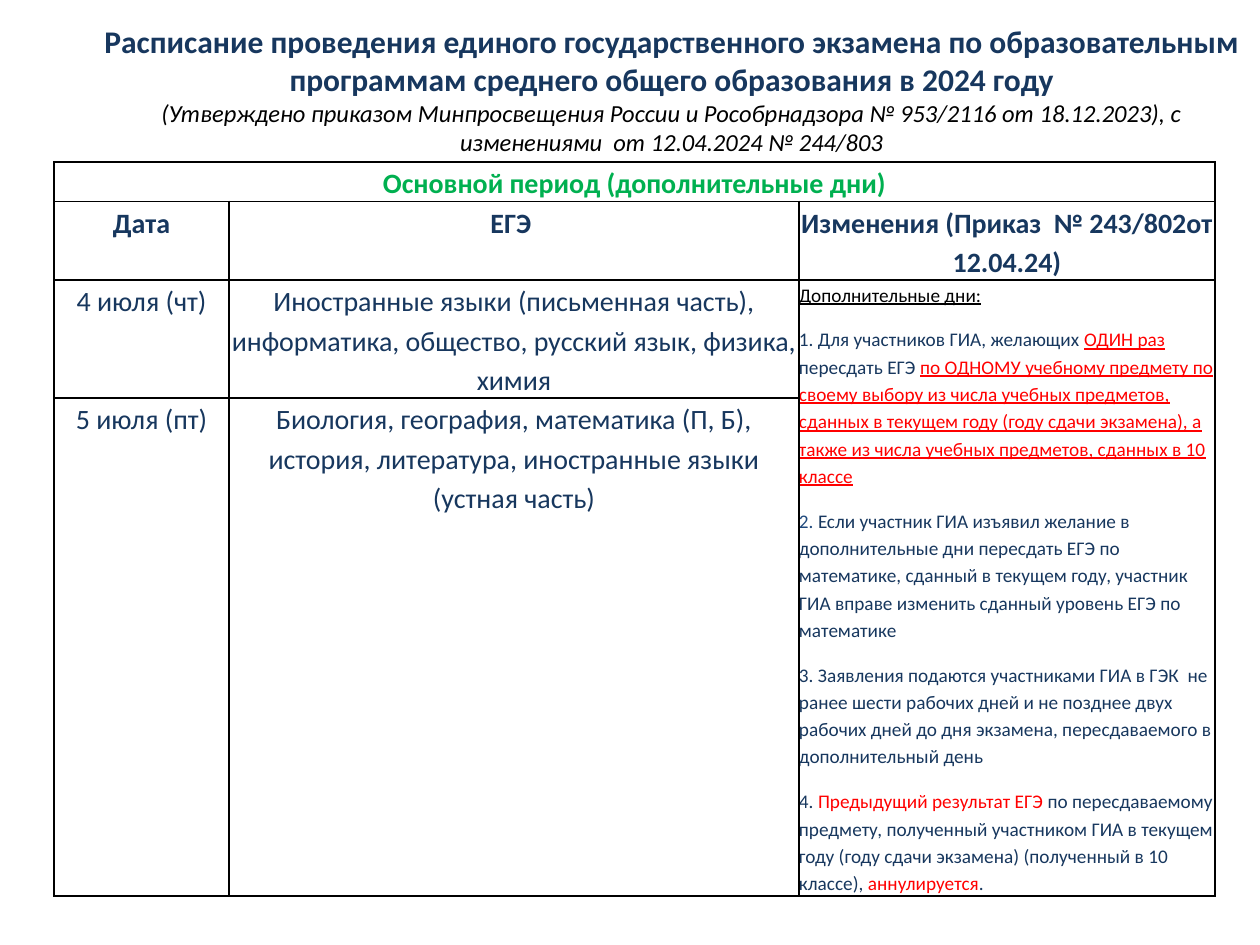
from lxml.etree import SubElement
from pptx import Presentation
from pptx.dml.color import RGBColor
from pptx.enum.text import MSO_ANCHOR, PP_ALIGN
from pptx.oxml.ns import qn
from pptx.util import Emu, Pt

PX = 914400 // 126
FONT = "Calibri"
COLORS = {"navy": "17375E", "green": "00B050", "red": "FF0000", "blue": "1F497D", "black": "000000"}

TITLE_BOX = (84, 16, 1176, 217)
TITLE = "Расписание проведения единого государственного экзамена по образовательным программам среднего общего образования в 2024 году"
APPROVAL = "(Утверждено приказом Минпросвещения России и Рособрнадзора № 953/2116 от 18.12.2023), с изменениями  от 12.04.2024 № 244/803"

TABLE_ORIGIN = (54, 162)
COLUMN_WIDTHS = (175, 570, 416)
ROW_HEIGHTS = (38, 78, 117, 484)
PERIOD = "Основной период (дополнительные дни)"
HEADERS = ("Дата", "ЕГЭ ", "Изменения (Приказ  № 243/802от 12.04.24)")
EXAMS = (
    ("4 июля (чт)", "Иностранные языки (письменная часть), информатика, общество, русский язык, физика, химия"),
    ("5 июля (пт)", "Биология, география, математика (П, Б), история, литература, иностранные языки (устная часть)"),
)
CHANGES = (
    (("Дополнительные дни:", "black", True),),
    (
        ("1. Для участников ГИА, желающих ", "navy", False),
        ("ОДИН раз ", "red", True),
        ("пересдать ЕГЭ ", "navy", False),
        ("по ОДНОМУ учебному предмету по своему выбору из числа учебных предметов, сданных в текущем году (году сдачи экзамена), а также из числа учебных предметов, сданных в 10 классе", "red", True),
    ),
    (
        ("2. ", "blue", False),
        ("Если участник ГИА изъявил желание в дополнительные дни пересдать ЕГЭ по математике, сданный в текущем году, участник ГИА вправе изменить сданный уровень ЕГЭ по математике", "navy", False),
    ),
    (("3. Заявления подаются участниками ГИА в ГЭК  не ранее шести рабочих дней и не позднее двух рабочих дней до дня экзамена, пересдаваемого в дополнительный день", "navy", False),),
    (
        ("4. ", "navy", False),
        ("Предыдущий результат ЕГЭ", "red", False),
        (" по пересдаваемому предмету, полученный участником ГИА в текущем году (году сдачи экзамена) (полученный в 10 классе), ", "navy", False),
        ("аннулируется", "red", False),
        (".", "navy", False),
    ),
)


def px(value):
    return Emu(value * PX)


def rgb(name):
    return RGBColor.from_string(COLORS[name])


def set_font(paragraph, size, bold=False, italic=False):
    font = paragraph.font
    font.name, font.size, font.bold, font.italic = FONT, Pt(size), bold, italic


def write_line(paragraph, text, size, color, bold=False, italic=False):
    paragraph.text = text
    paragraph.alignment = PP_ALIGN.CENTER
    set_font(paragraph, size, bold, italic)
    paragraph.font.color.rgb = rgb(color)


def write_cell(cell, text, color="navy", bold=False, space_after=0):
    paragraph = cell.text_frame.paragraphs[0]
    paragraph.line_spacing = 1.15
    paragraph.space_after = Pt(space_after)
    write_line(paragraph, text, 16, color, bold)


def write_changes(cell):
    frame = cell.text_frame
    for index, parts in enumerate(CHANGES):
        paragraph = frame.add_paragraph() if index else frame.paragraphs[0]
        paragraph.line_spacing = 1.15
        paragraph.space_after = Pt(10)
        set_font(paragraph, 11)
        for text, color, underlined in parts:
            run = paragraph.add_run()
            run.text = text
            run.font.color.rgb = rgb(color)
            run.font.underline = underlined


def format_cell(cell, side_margin=0):
    cell.margin_left = cell.margin_right = px(side_margin)
    cell.margin_top = cell.margin_bottom = 0
    cell.vertical_anchor = MSO_ANCHOR.TOP
    properties = cell._tc.get_or_add_tcPr()
    for side in ("lnL", "lnR", "lnT", "lnB"):
        line = SubElement(properties, qn(f"a:{side}"), w=str(Pt(1)))
        fill = SubElement(line, qn("a:solidFill"))
        SubElement(fill, qn("a:srgbClr"), val=COLORS["black"])
    cell.fill.background()


def add_schedule(slide):
    shape = slide.shapes.add_table(
        len(ROW_HEIGHTS), len(COLUMN_WIDTHS),
        *map(px, (*TABLE_ORIGIN, sum(COLUMN_WIDTHS), sum(ROW_HEIGHTS))))
    table = shape.table
    table.first_row = table.horz_banding = False
    for column, width in zip(table.columns, COLUMN_WIDTHS):
        column.width = px(width)
    for index, height in enumerate(ROW_HEIGHTS):
        table.rows[index].height = px(height)
        for column in range(len(COLUMN_WIDTHS)):
            format_cell(table.cell(index, column), 0 if index else 5)
    table.cell(0, 0).merge(table.cell(0, 2))
    table.cell(2, 2).merge(table.cell(3, 2))
    write_cell(table.cell(0, 0), PERIOD, "green", True)
    for column, text in enumerate(HEADERS):
        write_cell(table.cell(1, column), text, bold=True)
    for row, exam in enumerate(EXAMS, start=2):
        for column, text in enumerate(exam):
            write_cell(table.cell(row, column), text, space_after=10)
    write_changes(table.cell(2, 2))


def add_title(slide):
    frame = slide.shapes.add_textbox(*map(px, TITLE_BOX)).text_frame
    frame.word_wrap = True
    write_line(frame.paragraphs[0], TITLE, 18, "navy", bold=True)
    write_line(frame.add_paragraph(), APPROVAL, 14, "black", italic=True)


def main():
    presentation = Presentation()
    presentation.slide_width, presentation.slide_height = px(1260), px(945)
    slide = presentation.slides.add_slide(presentation.slide_layouts[6])
    add_schedule(slide)
    add_title(slide)
    presentation.save("out.pptx")


if __name__ == "__main__":
    main()
